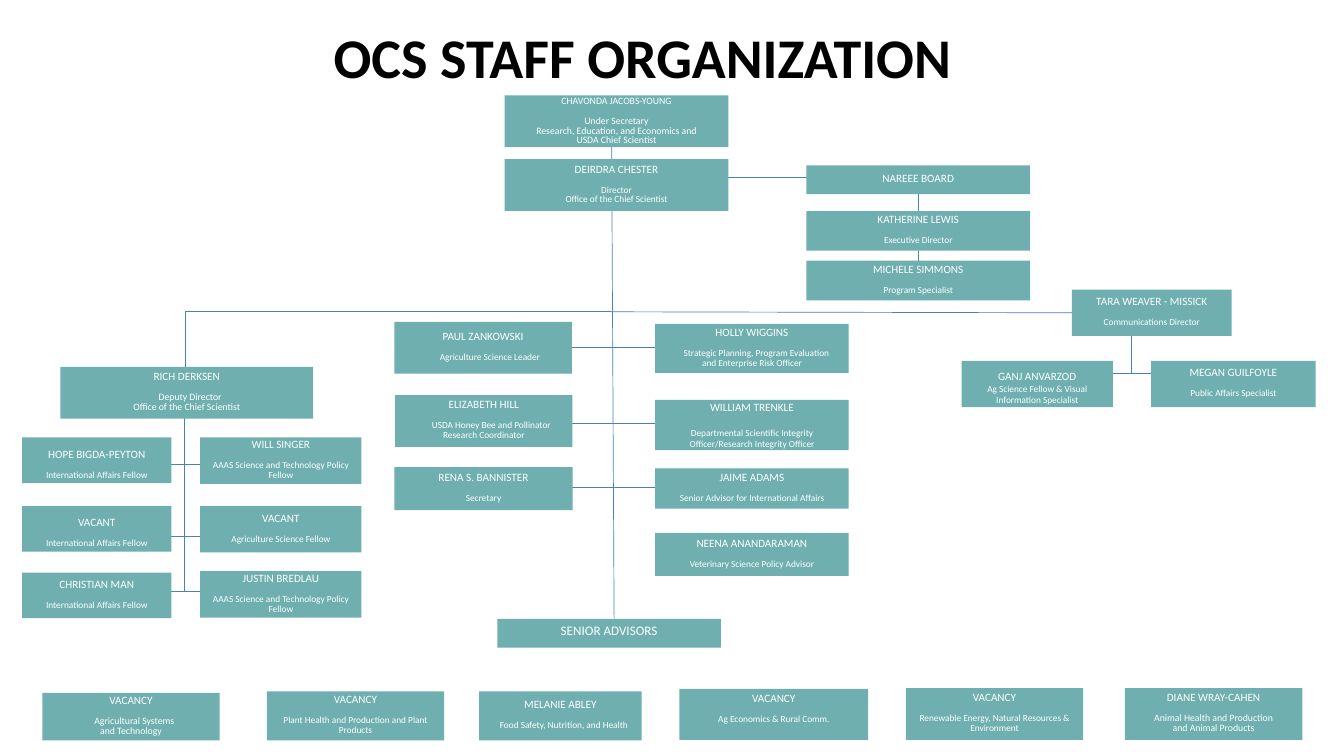
from dataclasses import dataclass

from lxml import etree
from pptx import Presentation
from pptx import util as u
from pptx.dml.color import RGBColor
from pptx.enum import shapes, text
from pptx.oxml.ns import qn

SCALE = 9144  # EMU in one px: 100 px to the inch
TOP, LEFT, BOTTOM = 0, 1, 2


@dataclass(frozen=True)
class Theme:
    font: str = "Calibri"
    fill: str = "6FAFAF"
    line: str = "4B7EBC"
    ink: str = "000000"
    pale: str = "FFFFFF"
    head: float = 60
    name: float = 12
    role: float = 10
    lead: float = 10.5
    rule: float = 0.75


def px(n):
    return u.Emu(round(n * SCALE))


def put(par, words, font, size, color, lead, bold=False, gap=0, indent=0):
    """Fill one centred paragraph; lead is points, or a float factor up to 2."""
    par.text = words
    par.alignment = text.PP_ALIGN.CENTER
    par.line_spacing = lead if lead <= 2 else u.Pt(lead)
    par.space_before = u.Pt(gap)
    if indent:
        props = par._p.get_or_add_pPr()
        props.set("marL", "0")
        props.set("indent", str(px(indent)))
    for run in par.runs:
        run.font.name = font
        run.font.size = u.Pt(size)
        run.font.bold = bold
        run.font.color.rgb = RGBColor.from_string(color)


class Chart:
    def __init__(self, slide, theme):
        self.slide, self.theme = slide, theme

    def title(self, x, y, w, h, words):
        t = self.theme
        frame = self.slide.shapes.add_textbox(*map(px, (x, y, w, h))).text_frame
        frame.word_wrap = True
        frame.margin_left = frame.margin_right = 0
        frame.margin_top = frame.margin_bottom = 0
        put(frame.paragraphs[0], words, t.font, t.head, t.ink, 86.4, bold=True)

    def box(self, x, y, w, h, name, *roles, big=None, size=None, gap=10.5,
            lead=None, first=None, indent=0, drop=0):
        """Staff box; drop moves the text down (or up, if below 0)."""
        t = self.theme
        lead = lead or t.lead
        shape = self.slide.shapes.add_shape(
            shapes.MSO_SHAPE.RECTANGLE, *map(px, (x, y, w, h)))
        shape.shadow.inherit = False
        shape.fill.solid()
        shape.fill.fore_color.rgb = RGBColor.from_string(t.fill)
        shape.line.fill.background()
        frame = shape.text_frame
        frame.word_wrap = True
        frame.vertical_anchor = text.MSO_ANCHOR.MIDDLE
        frame.margin_left = frame.margin_right = px(15)
        frame.margin_top = px(4 + max(drop, 0))
        frame.margin_bottom = px(4 + max(-drop, 0))
        put(frame.paragraphs[0], name, t.font, big or t.name, t.pale, first or lead)
        for i, role in enumerate(roles):
            last = i == len(roles) - 1
            put(frame.add_paragraph(), role, t.font, size or t.role, t.pale, lead,
                gap=0 if i else gap,
                indent=indent if (indent < 0) == (last and i > 0) else 0)
        return shape

    def line(self, x1, y1, x2, y2, kind=shapes.MSO_CONNECTOR.STRAIGHT):
        line = self.slide.shapes.add_connector(kind, *map(px, (x1, y1, x2, y2)))
        line.line.width = u.Pt(self.theme.rule)
        line.line.color.rgb = RGBColor.from_string(self.theme.line)
        etree.SubElement(line._element.spPr, qn("a:effectLst"))
        return line

    def elbow(self, x1, y1, x2, y2, bend=50000):
        line = self.line(x1, y1, x2, y2, shapes.MSO_CONNECTOR.ELBOW)
        geom = line._element.spPr.find(qn("a:prstGeom"))
        vals = geom.find(qn("a:avLst"))
        if vals is None:
            vals = etree.SubElement(geom, qn("a:avLst"))
        etree.SubElement(vals, qn("a:gd"), name="adj1", fmla=f"val {bend}")

    def join(self, top, low):
        """Link the bottom of one box to the top of the next."""
        mid = (top.left + top.width / 2) / SCALE
        line = self.line(mid, (top.top + top.height) / SCALE, mid, low.top / SCALE)
        line.begin_connect(top, BOTTOM)
        line.end_connect(low, TOP)


def lines(chart):
    chart.line(275, 573, 275, 880)
    chart.line(910, 181, 914, 943)
    for ends in ((327, 880, 130, 892), (325, 798, 127, 810), (342, 691, 94, 708),
                 (991, 630, 605, 633), (1011, 726, 605, 732),
                 (1733, 556, 1535, 568), (985, 517, 601, 518)):
        chart.elbow(*ends)
    chart.elbow(800, 283, 1433, 264, bend=33400)
    chart.elbow(910, 464, 240, 592, bend=94700)


def leaders(chart):
    box = chart.box
    office = "Office of the Chief Scientist"
    box(751, 142, 333, 77, "CHAVONDA JACOBS-YOUNG", "Under Secretary",
        "Research, Education, and Economics and\nUSDA Chief Scientist",
        big=10.5, size=10.5, indent=-42)
    box(751, 237, 333, 77, "DEIRDRA CHESTER", "Director", office)
    box(90, 546, 376, 77, "RICH DERKSEN", "Deputy Director", office,
        size=10.5, indent=10)
    board = box(1200, 246, 333, 43, "NAREEE BOARD")
    head = box(1200, 314, 333, 59, "KATHERINE LEWIS", "Executive Director")
    aide = box(1200, 388, 333, 59, "MICHELE SIMMONS", "Program Specialist")
    chart.join(board, head)
    chart.join(head, aide)

    press = box(1595, 431, 238, 69, "TARA WEAVER - MISSICK", "Communications Director")
    chart.line(908, 464, 1595, 465).end_connect(press, LEFT)
    chart.line(1683, 500, 1683, 556)
    box(1431, 537, 225, 69, "GANJ ANVARZOD", "Ag Science Fellow & Visual",
        "Information Specialist", lead=1.0, first=1.5, gap=0)
    box(1713, 537, 245, 69, "MEGAN GUILFOYLE", "Public Affairs Specialist")


def staff(chart):
    box = chart.box
    box(587, 479, 264, 77, "PAUL ZANKOWSKI", "Agriculture Science Leader", indent=20)
    box(588, 588, 264, 77, "ELIZABETH HILL",
        "USDA Honey Bee and Pollinator\nResearch Coordinator", indent=22)
    box(587, 695, 265, 64, "RENA S. BANNISTER", "Secretary")

    x, w = 975, 288
    box(x, 482, w, 73, "HOLLY WIGGINS",
        "Strategic Planning, Program Evaluation\nand Enterprise Risk Officer", indent=13)
    box(x, 595, w, 75, "WILLIAM TRENKLE",
        "Departmental Scientific Integrity Officer/Research Integrity Officer",
        lead=1.0, gap=14.65)
    box(x, 697, w, 60, "JAIME ADAMS", "Senior Advisor for International Affairs")
    box(x, 793, w, 64, "NEENA ANANDARAMAN", "Veterinary Science Policy Advisor")

    for y, name, drop in ((651, "HOPE BIGDA-PEYTON", 15), (753, "VACANT", 15),
                          (852, "CHRISTIAN MAN", 0)):
        box(33, y, 222, 68, name, "International Affairs Fellow", drop=drop)
    policy = "AAAS Science and Technology Policy Fellow"
    for y, name, role in ((651, "WILL SINGER", policy),
                          (753, "VACANT", "Agriculture Science Fellow"),
                          (850, "JUSTIN BREDLAU", policy)):
        box(298, y, 240, 69, name, role)


def seniors(chart):
    box = chart.box
    box(740, 921, 333, 43, "SENIOR ADVISORS", big=14)
    box(63, 1031, 264, 71, "VACANCY", "Agricultural Systems", "and Technology",
        size=10.5, indent=10)
    box(397, 1029, 264, 73, "VACANCY", "Plant Health and Production and Plant Products")
    box(713, 1029, 242, 73, "MELANIE ABLEY", "Food Safety, Nutrition, and Health",
        indent=10)
    box(1011, 1025, 281, 76, "VACANCY", "Ag Economics & Rural Comm.", drop=-15)
    box(1348, 1024, 264, 77, "VACANCY",
        "Renewable Energy, Natural Resources & Environment")
    box(1674, 1024, 264, 77, "DIANE WRAY-CAHEN", "Animal Health and Production",
        "and Animal Products", size=10.5)


def main():
    deck = Presentation()
    deck.slide_width, deck.slide_height = px(2000), px(1125)
    chart = Chart(deck.slides.add_slide(deck.slide_layouts[6]), Theme())
    lines(chart)
    chart.title(35, 13, 1842, 115, "OCS STAFF ORGANIZATION")
    leaders(chart)
    staff(chart)
    seniors(chart)
    deck.save("out.pptx")


if __name__ == "__main__":
    main()
